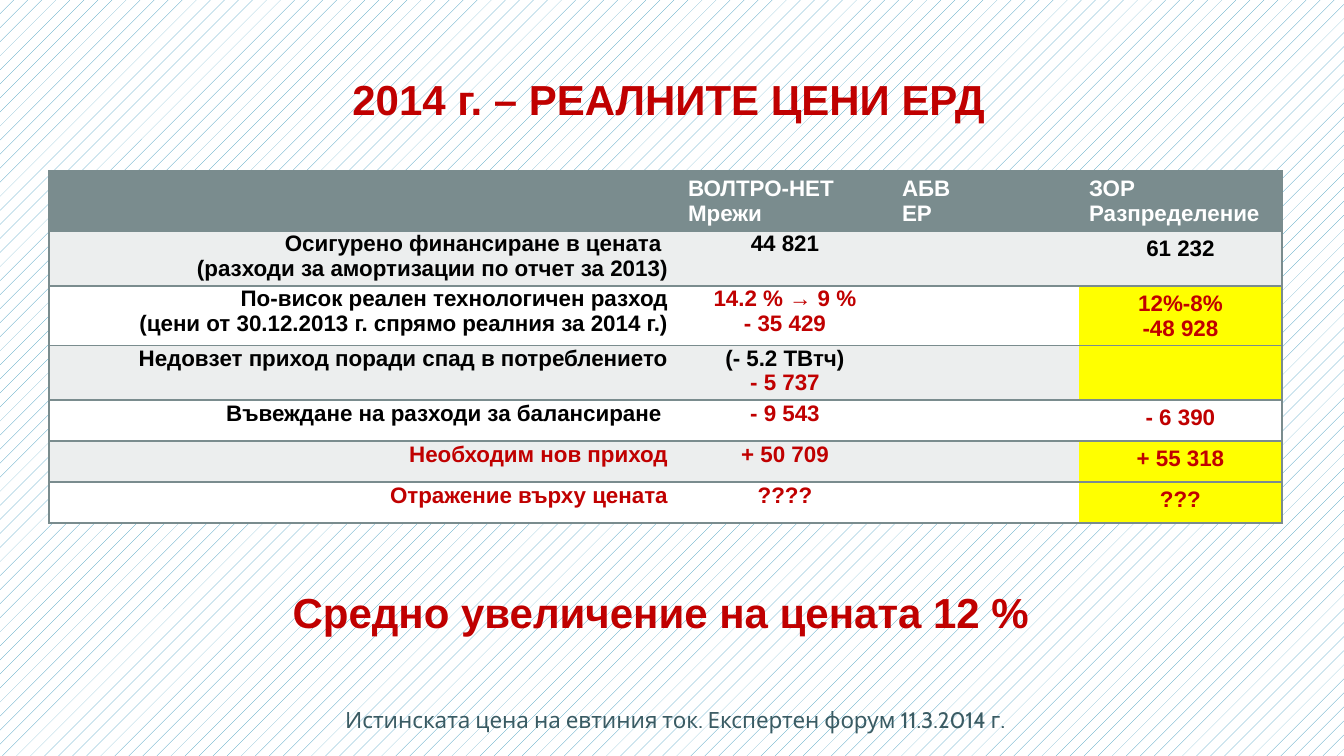
from dataclasses import dataclass

from lxml.etree import SubElement
from pptx import Presentation
from pptx.dml.color import RGBColor
from pptx.enum.dml import MSO_PATTERN
from pptx.enum.text import MSO_ANCHOR, PP_ALIGN
from pptx.oxml.ns import qn
from pptx.util import Emu, Pt

SCALE = 12192000 / 1344


@dataclass(frozen=True)
class Theme:
    red: str = "C00000"
    black: str = "000000"
    white: str = "FFFFFF"
    slate: str = "7A8C8E"
    band: str = "ECEEEE"
    mark: str = "FFFF00"
    foot: str = "3A5B63"
    dots: str = "3494BA"
    sans: str = "Arial"
    soft: str = "Cabin"
    big: int = 30
    small: int = 16


THEME = Theme()


@dataclass(frozen=True)
class Label:
    text: str
    left: int
    top: int
    width: int
    height: int
    size: int = THEME.big
    font: str = THEME.sans
    color: str = THEME.red
    bold: bool = True


@dataclass(frozen=True)
class Line:
    text: str
    color: str = THEME.red


@dataclass(frozen=True)
class Row:
    height: int
    item: tuple[Line, ...]
    first: tuple[Line, ...]
    last: tuple[Line, ...]
    marked: bool = False


LABELS = [
    Label("2014 г. – РЕАЛНИТЕ ЦЕНИ ЕРД", 69, 51, 1200, 78),
    Label("Средно увеличение на цената 12 %", 61, 564, 1200, 78),
    Label("Истинската цена на евтиния ток. Експертен форум 11.3.2014 г.",
          43, 688, 1265, 50, THEME.small, THEME.soft, THEME.foot, False),
]

COLS = [629, 214, 187, 203]
HEAD_HEIGHT = 60
HEADS = [(), ("ВОЛТРО-НЕТ Мрежи",), ("АБВ", "ЕР"), ("ЗОР Разпределение",)]


def black(*texts: str) -> tuple[Line, ...]:
    return tuple(Line(text, THEME.black) for text in texts)


def red(*texts: str) -> tuple[Line, ...]:
    return tuple(Line(text) for text in texts)


ROWS = [
    Row(55, black("Осигурено финансиране в цената ",
                  "(разходи за амортизации по отчет за 2013)"),
        black("44 821"), black("61 232")),
    Row(60, black("По-висок реален технологичен разход",
                  "(цени от 30.12.2013 г. спрямо реалния за 2014 г.)"),
        red("14.2 % → 9 %", "- 35 429"), red("12%-8%", "-48 928"), True),
    Row(54, black("Недовзет приход поради спад в потреблението"),
        black("(- 5.2 ТВтч)") + red("- 5 737"), (), True),
    Row(41, black("Въвеждане на разходи за балансиране "),
        red("- 9 543"), red("- 6 390")),
    Row(41, red("Необходим нов приход"), red("+ 50 709"), red("+ 55 318"), True),
    Row(41, red("Отражение върху цената"), red("????"), red("???"), True),
]


def px(count: int) -> Emu:
    return Emu(round(count * SCALE))


def style(font, size: int, name: str, color: str, bold: bool) -> None:
    font.size = Pt(size)
    font.name = name
    font.bold = bold
    font.color.rgb = RGBColor.from_string(color)


def add_label(slide, label: Label) -> None:
    box = slide.shapes.add_textbox(
        px(label.left), px(label.top), px(label.width), px(label.height))
    frame = box.text_frame
    frame.word_wrap = True
    frame.vertical_anchor = MSO_ANCHOR.BOTTOM
    para = frame.paragraphs[0]
    para.text = label.text
    para.alignment = PP_ALIGN.CENTER
    style(para.font, label.size, label.font, label.color, label.bold)


def set_edges(cell, shown: str) -> None:
    props = cell._tc.get_or_add_tcPr()
    for side in "LRTB":
        edge = SubElement(props, qn(f"a:ln{side}"), w=str(Pt(1)))
        if side in shown:
            fill = SubElement(edge, qn("a:solidFill"))
            SubElement(fill, qn("a:srgbClr"), val=THEME.slate)
        else:
            SubElement(edge, qn("a:noFill"))


def fill_cell(cell, lines: tuple[Line, ...], fill: str, edges: str,
              align: PP_ALIGN, tight: bool) -> None:
    set_edges(cell, edges)
    cell.fill.solid()
    cell.fill.fore_color.rgb = RGBColor.from_string(fill)
    frame = cell.text_frame
    for index, line in enumerate(lines):
        para = frame.add_paragraph() if index else frame.paragraphs[0]
        para.text = line.text
        para.alignment = align
        if tight:
            para.line_spacing = 0.8
            para.space_before = Pt(3 if index else 0)
        style(para.font, THEME.small, THEME.sans, line.color, True)


def add_grid(slide) -> None:
    heights = [HEAD_HEIGHT] + [row.height for row in ROWS]
    table = slide.shapes.add_table(
        len(heights), len(COLS), px(49), px(171),
        px(sum(COLS)), px(sum(heights))).table
    table.horz_banding = False
    for col, width in zip(table.columns, COLS):
        col.width = px(width)
    for row, height in zip(table.rows, heights):
        row.height = px(height)
    edges = ["LTB", "TB", "TB", "RTB"]

    # Header
    for index, texts in enumerate(HEADS):
        lines = tuple(Line(text, THEME.white) for text in texts)
        fill_cell(table.cell(0, index), lines, THEME.slate, edges[index],
                  PP_ALIGN.LEFT, False)

    # Body
    for place, row in enumerate(ROWS, 1):
        base = THEME.band if place % 2 else THEME.white
        for index, lines in enumerate((row.item, row.first, (), row.last)):
            final = index == len(COLS) - 1
            fill = THEME.mark if final and row.marked else base
            align = PP_ALIGN.CENTER if index else PP_ALIGN.RIGHT
            fill_cell(table.cell(place, index), lines, fill, edges[index],
                      align, not final)


def main() -> None:
    deck = Presentation()
    deck.slide_width, deck.slide_height = px(1344), px(756)
    slide = deck.slides.add_slide(deck.slide_layouts[6])

    # Backdrop
    back = slide.background.fill
    back.patterned()
    back.pattern = MSO_PATTERN.PERCENT_5
    back.fore_color.rgb = RGBColor.from_string(THEME.dots)
    back.back_color.rgb = RGBColor.from_string(THEME.white)

    # Content
    add_grid(slide)
    for label in LABELS:
        add_label(slide, label)
    deck.save("out.pptx")


if __name__ == "__main__":
    main()
